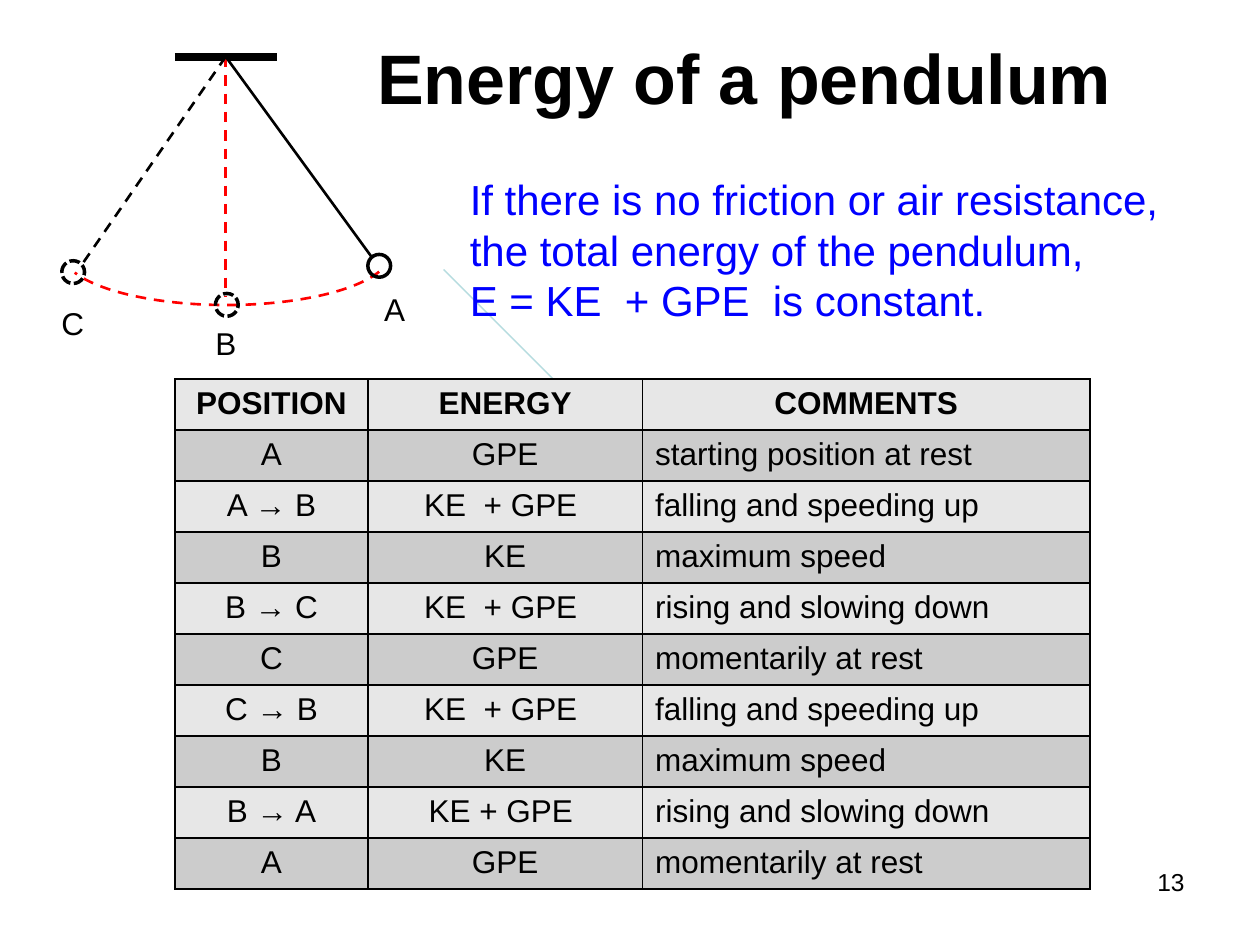
from lxml import etree
from pptx import Presentation
from pptx.dml.color import RGBColor
from pptx.enum import dml, shapes, text
from pptx.oxml import ns
from pptx.util import Pt

HEX = {"ink": "000000", "paper": "FFFFFF", "red": "FF0000", "blue": "0000FF",
       "pale": "B6DCDF", "light": "E7E7E7", "dark": "CCCCCC"}
FONT = "Arial"
DASH = dml.MSO_LINE.DASH
DOTS = dml.MSO_LINE.SQUARE_DOT
LEFT, MID, RIGHT = text.PP_ALIGN.LEFT, text.PP_ALIGN.CENTER, text.PP_ALIGN.RIGHT

ROWS = [
    ("POSITION", "ENERGY", "COMMENTS"),
    ("A", "GPE", "starting position at rest"),
    ("A → B", "KE  + GPE ", "falling and speeding up"),
    ("B", "KE", "maximum speed"),
    ("B → C", "KE  + GPE ", "rising and slowing down"),
    ("C", "GPE", "momentarily at rest"),
    ("C → B", "KE  + GPE ", "falling and speeding up"),
    ("B", "KE", "maximum speed"),
    ("B → A", "KE + GPE ", "rising and slowing down"),
    ("A", "GPE", "momentarily at rest"),
]


def color(name):
    return RGBColor.from_string(HEX[name])


def write(frame, lines, size, ink="ink", bold=False, align=LEFT):
    for i, line in enumerate(lines):
        para = frame.add_paragraph() if i else frame.paragraphs[0]
        para.alignment = align
        run = para.add_run()
        run.text = line
        font = run.font
        font.name, font.size, font.bold = FONT, Pt(size), bold
        font.color.rgb = color(ink)


def stroke(line, ink, width, dash=None):
    line.color.rgb = color(ink)
    line.width = Pt(width)
    if dash is not None:
        line.dash_style = dash


def add_text(parent, box, lines, size, ink="ink", align=LEFT, wrap=True):
    frame = parent.add_textbox(*map(Pt, box)).text_frame
    frame.word_wrap = wrap
    write(frame, lines, size, ink, align=align)


def add_line(parent, start, end, ink, width, dash=None):
    line = parent.add_connector(shapes.MSO_CONNECTOR.STRAIGHT,
                                *map(Pt, (*start, *end)))
    stroke(line.line, ink, width, dash)
    etree.SubElement(line._element.spPr, ns.qn("a:effectLst"))


def add_form(parent, kind, box, ink, width, dash=None):
    form = parent.add_shape(kind, *map(Pt, box))
    form.shadow.inherit = False
    form.fill.background()
    stroke(form.line, ink, width, dash)
    return form


def add_title(slide, box):
    title = slide.shapes.title
    title.left, title.top, title.width, title.height = map(Pt, box)
    title.fill.solid()
    title.fill.fore_color.rgb = color("paper")
    frame = title.text_frame
    frame.auto_size = text.MSO_AUTO_SIZE.NONE
    frame.vertical_anchor = text.MSO_ANCHOR.MIDDLE
    write(frame, ["Energy of a pendulum "], 40, bold=True, align=RIGHT)


def add_swing(slide, left, top):
    group = slide.shapes.add_group_shape().shapes

    def spot(x, y):
        return left + x, top + y

    # Support, rest line and path of the bob
    pivot = spot(101, 0)
    add_line(group, spot(72, 0), spot(130.5, 0), "ink", 4.5)
    add_line(group, pivot, spot(101, 137.5), "red", 1.5, DASH)
    arc = add_form(group, shapes.MSO_SHAPE.ARC, (*spot(7.3, 81.4), 188, 60.5),
                   "red", 1.5, DASH)
    arc.rotation = 180
    arc.adjustments[0], arc.adjustments[1] = 112.38, 211.37

    # Bobs with their letters
    size = 13
    bobs = [("A", 188.7, 119.5, 184.4, 129.6, None),
            ("B", 101.6, 141.8, 88, 149, DOTS),
            ("C", 13.8, 123.1, 0, 137.5, DOTS)]
    for name, x, y, tx, ty, dash in bobs:
        box = (*spot(x - size / 2, y - size / 2), size, size)
        add_form(group, shapes.MSO_SHAPE.OVAL, box, "ink", 2, dash)
        add_text(group, (*spot(tx, ty), 27, 29), [name], 18, wrap=False)

    # Strings
    add_line(group, spot(184.4, 114.5), pivot, "ink", 1.5)
    add_line(group, pivot, spot(18.8, 118.8), "ink", 1.5, DASH)


def edge_cell(cell):
    props = cell._tc.get_or_add_tcPr()
    for i, side in enumerate(("lnL", "lnR", "lnT", "lnB")):
        line = etree.Element(ns.qn("a:" + side), w=str(Pt(1)))
        fill = etree.SubElement(line, ns.qn("a:solidFill"))
        etree.SubElement(fill, ns.qn("a:srgbClr"), val=HEX["ink"])
        props.insert(i, line)


def add_grid(slide, left, top, widths, height):
    box = (left, top, sum(widths), height * len(ROWS))
    table = slide.shapes.add_table(len(ROWS), len(widths), *map(Pt, box)).table
    for col, width in zip(table.columns, widths):
        col.width = Pt(width)
    for r, row in enumerate(ROWS):
        table.rows[r].height = Pt(height)
        for c, words in enumerate(row):
            cell = table.cell(r, c)
            cell.fill.solid()
            cell.fill.fore_color.rgb = color("dark" if r % 2 else "light")
            edge_cell(cell)
            align = LEFT if r and c == 2 else MID
            write(cell.text_frame, [words], 18, bold=r == 0, align=align)


def main():
    deck = Presentation()
    deck.slide_width, deck.slide_height = Pt(720), Pt(540)
    slide = deck.slides.add_slide(deck.slide_layouts[5])

    # Title, page number and stray accent line
    add_title(slide, (204.5, 10, 437.8, 67.7))
    add_text(slide.shapes, (516, 492, 168, 37.5), ["13"], 14, align=RIGHT)
    add_line(slide.shapes, (253.5, 154), (325.5, 226), "pale", 0.75)

    # Pendulum, energy table and statement
    add_swing(slide, 28, 32.4)
    add_grid(slide, 100, 216.7, (110.2, 157, 255.6), 29.16)
    add_text(slide.shapes, (261.4, 95.8, 410.4, 94.3),
             ["If there is no friction or air resistance,",
              "the total energy of the pendulum,",
              "E = KE  + GPE  is constant."], 24, "blue")
    deck.save("out.pptx")


if __name__ == "__main__":
    main()
